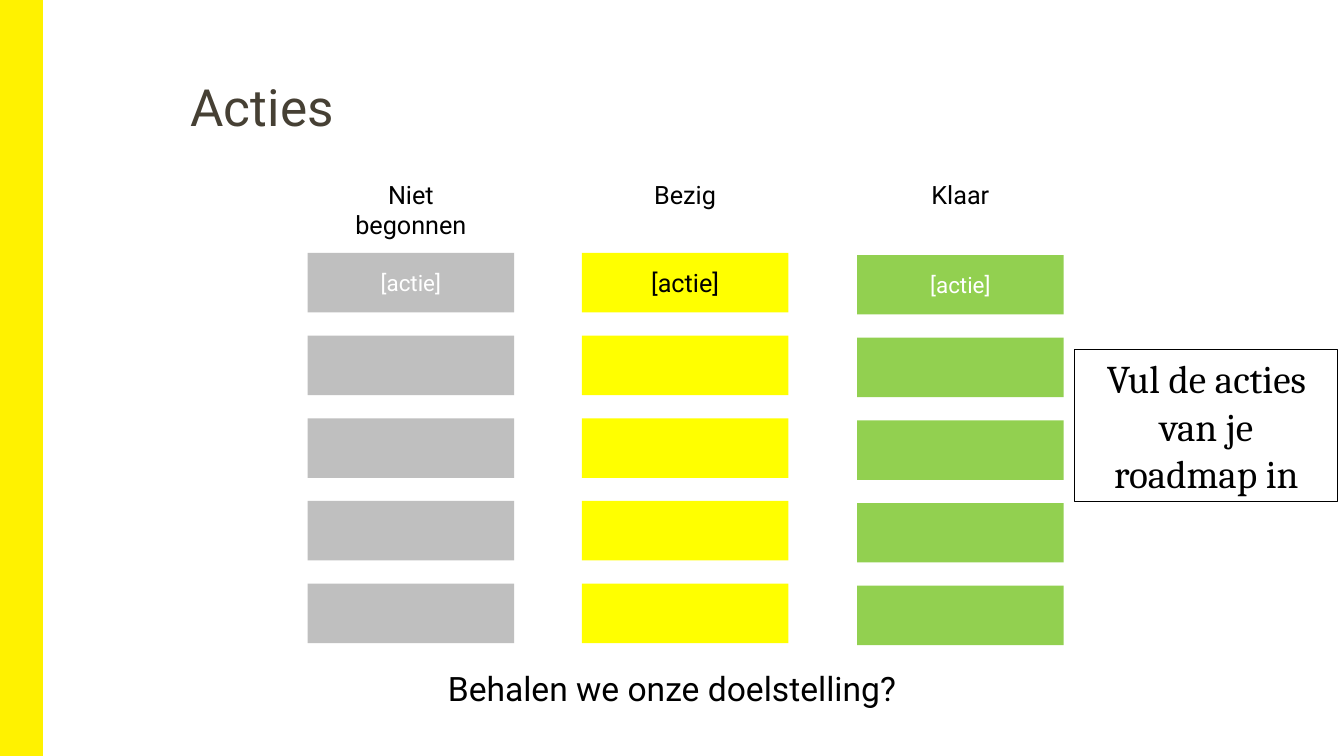
from pptx import Presentation
from pptx.dml.color import RGBColor
from pptx.enum.shapes import MSO_SHAPE
from pptx.enum.text import MSO_ANCHOR, MSO_AUTO_SIZE, PP_ALIGN
from pptx.util import Inches, Pt

BLACK = RGBColor(0x00, 0x00, 0x00)
WHITE = RGBColor(0xFF, 0xFF, 0xFF)
OLIVE = RGBColor(0x46, 0x40, 0x34)
BAND_YELLOW = RGBColor(0xFF, 0xF2, 0x00)
GRAY = RGBColor(0xBF, 0xBF, 0xBF)
YELLOW = RGBColor(0xFF, 0xFF, 0x00)
GREEN = RGBColor(0x92, 0xD0, 0x50)


class Board:
    """Style and current slide."""

    font = "Roboto"

    def __init__(self, prs):
        self.s = prs.slides.add_slide(prs.slide_layouts[6])

    def add_text(self, tf, text, size, color=BLACK, align=PP_ALIGN.CENTER, font=None):
        p = tf.paragraphs[0]
        p.alignment = align
        r = p.add_run()
        r.text = text
        r.font.color.rgb = color
        for name, value in {"name": font or self.font, "size": Pt(size)}.items():
            setattr(r.font, name, value)
        return p

    def box(self, x, y, w, h, fill=None, line=None, line_width=1):
        sp = self.s.shapes.add_shape(
            MSO_SHAPE.RECTANGLE, Inches(x), Inches(y), Inches(w), Inches(h))
        sp.shadow.inherit = False
        if fill is None:
            sp.fill.background()
        else:
            sp.fill.solid()
            sp.fill.fore_color.rgb = fill
        if line is None:
            sp.line.fill.background()
        else:
            sp.line.color.rgb = line
            sp.line.width = Pt(line_width)
        return sp

    def label(self, x, y, w, h, text, size):
        tf = self.s.shapes.add_textbox(
            Inches(x), Inches(y), Inches(w), Inches(h)).text_frame
        for name, value in {"word_wrap": True,
                            "auto_size": MSO_AUTO_SIZE.SHAPE_TO_FIT_TEXT}.items():
            setattr(tf, name, value)
        self.add_text(tf, text, size)

    def title(self, x, y, w, h, text):
        tf = self.s.shapes.add_textbox(
            Inches(x), Inches(y), Inches(w), Inches(h)).text_frame
        for name, value in {"word_wrap": True, "margin_left": 0, "margin_right": 0,
                            "margin_top": 0, "margin_bottom": 0}.items():
            setattr(tf, name, value)
        p = self.add_text(tf, text, 36.6, OLIVE, PP_ALIGN.LEFT)
        p.line_spacing = Pt(38)

    def column(self, x, y, heading, fill, size, color):
        self.label(x + 0.14, 1.73, 1.77, 0.4, heading, 18)
        for row in range(5):
            sp = self.box(x, y + row * 0.82, 2.05, 0.59, fill)
            if row == 0:
                tf = sp.text_frame
                tf.vertical_anchor = MSO_ANCHOR.MIDDLE
                self.add_text(tf, "[actie]", size, color)

    def callout(self, x, y, w, h, text):
        tf = self.box(x, y, w, h, line=BLACK, line_width=0.75).text_frame
        for name, value in {"word_wrap": True, "vertical_anchor": MSO_ANCHOR.TOP,
                            "auto_size": MSO_AUTO_SIZE.SHAPE_TO_FIT_TEXT}.items():
            setattr(tf, name, value)
        self.add_text(tf, text, 28, font="Cambria")


def main():
    prs = Presentation()
    prs.slide_width, prs.slide_height = Inches(13.33), Inches(7.5)
    board = Board(prs)

    # Side band and title
    board.box(0, 0, 0.42, 7.5, BAND_YELLOW, BAND_YELLOW)
    board.title(1.89, 0.83, 10.81, 1.22, "Acties")

    # Status columns
    board.column(3.05, 2.51, "Niet begonnen", GRAY, 16, WHITE)
    board.column(5.77, 2.51, "Bezig", YELLOW, 18, BLACK)
    board.column(8.5, 2.53, "Klaar", GREEN, 16, WHITE)

    # Closing question and instruction
    board.label(3.96, 6.58, 5.41, 0.5, "Behalen we onze doelstelling?", 24)
    board.callout(10.66, 3.47, 2.61, 1.51, "Vul de acties van je roadmap in")

    prs.save("out.pptx")


if __name__ == "__main__":
    main()
